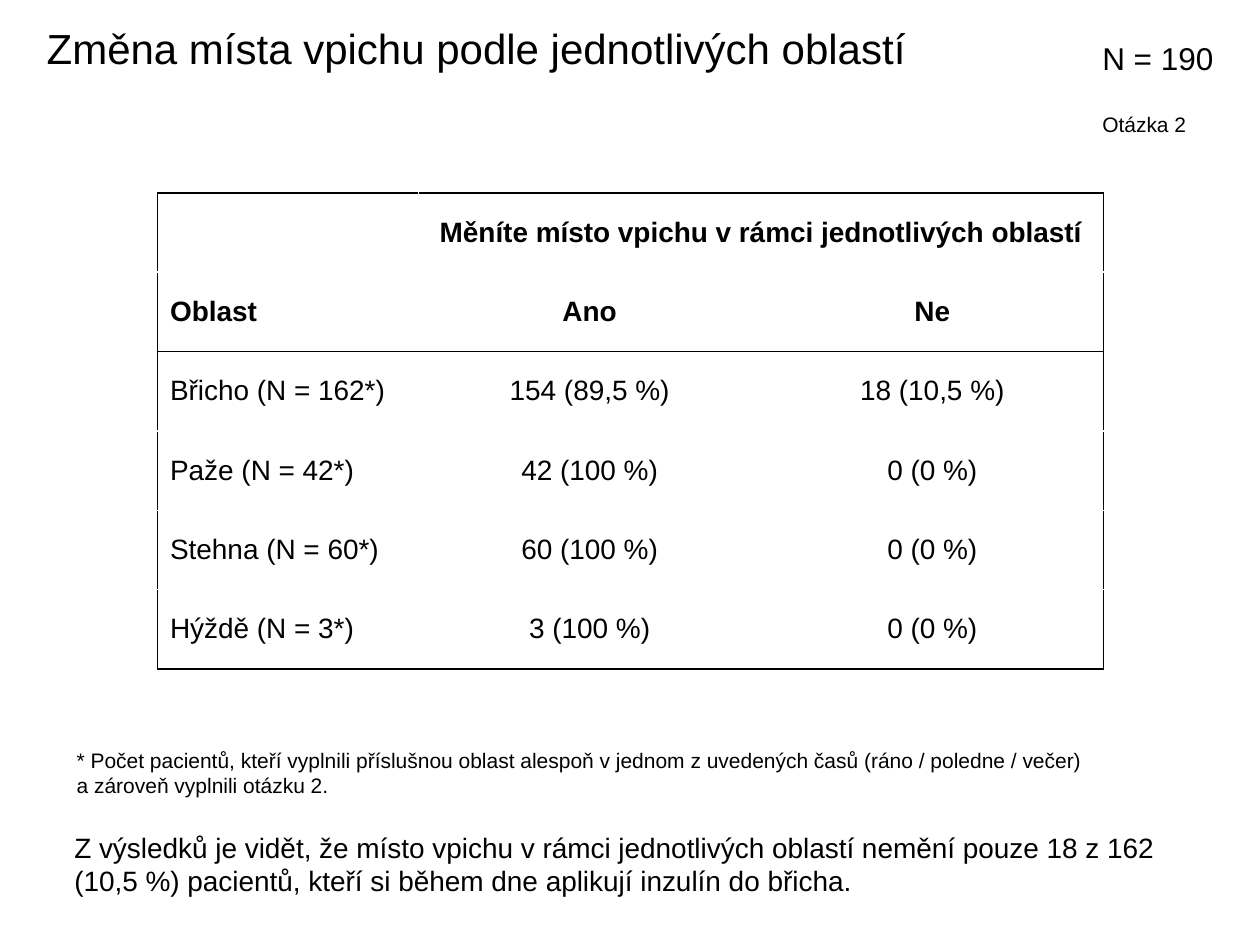
from lxml import etree
from pptx import Presentation
from pptx.dml.color import RGBColor
from pptx.enum.text import MSO_ANCHOR, MSO_AUTO_SIZE, PP_ALIGN
from pptx.oxml.ns import qn
from pptx.util import Inches, Pt

TOP, MIDDLE = MSO_ANCHOR.TOP, MSO_ANCHOR.MIDDLE
LEFT, CENTER = PP_ALIGN.LEFT, PP_ALIGN.CENTER
NO_FIT = MSO_AUTO_SIZE.NONE
FONT, BLACK, WHITE = "Arial", "000000", "FFFFFF"
TITLE_ONLY = 5

HEADER_ROWS = 2
COL_WIDTHS = [2.07, 2.72, 2.72]
ROW_HEIGHT = 0.63
ROWS = [
    ["", "Měníte místo vpichu v rámci jednotlivých oblastí", ""],
    ["Oblast", "Ano", "Ne"],
    ["Břicho (N = 162*)", "154 (89,5 %)", "18 (10,5 %)"],
    ["Paže (N = 42*)", "42 (100 %)", "0 (0 %)"],
    ["Stehna (N = 60*)", "60 (100 %)", "0 (0 %)"],
    ["Hýždě (N = 3*)", "3 (100 %)", "0 (0 %)"],
]


def color(value):
    return RGBColor.from_string(value)


def write(p, text, size, bold=False, align=LEFT):
    p.alignment = align
    r = p.add_run()
    r.text = text
    r.font.name = FONT
    r.font.size = Pt(size)
    r.font.bold = bold
    r.font.color.rgb = color(BLACK)


def add_title(s, text, x, y, w, h):
    sp = s.shapes.title
    sp.left, sp.top, sp.width, sp.height = map(Inches, (x, y, w, h))
    tf = sp.text_frame
    tf.auto_size = NO_FIT
    tf.vertical_anchor = TOP
    write(tf.paragraphs[0], text, 24)


def add_text(s, lines, x, y, w, h, size, wrap=True, inset=None):
    tf = s.shapes.add_textbox(*map(Inches, (x, y, w, h))).text_frame
    tf.word_wrap = wrap
    if inset is not None:
        tf.margin_left = tf.margin_right = Inches(inset)
        tf.margin_top = tf.margin_bottom = Inches(inset)
    for i, line in enumerate(lines):
        p = tf.add_paragraph() if i else tf.paragraphs[0]
        write(p, line, size)


def set_borders(cell, edges):
    tc_pr = cell._tc.get_or_add_tcPr()
    for side in "LRTB":
        ln = etree.SubElement(tc_pr, qn(f"a:ln{side}"), w=str(Pt(1)))
        fill = etree.SubElement(ln, qn("a:solidFill"))
        etree.SubElement(fill, qn("a:srgbClr"), val=BLACK if edges[side] else WHITE)


def add_results_table(s, x, y):
    n_rows, n_cols = len(ROWS), len(COL_WIDTHS)
    frame = s.shapes.add_table(n_rows, n_cols, Inches(x), Inches(y),
                               Inches(sum(COL_WIDTHS)), Inches(ROW_HEIGHT * n_rows))
    table = frame.table
    table.first_row = table.horz_banding = False
    for column, width in zip(table.columns, COL_WIDTHS):
        column.width = Inches(width)
    # The question spans both answer columns
    table.cell(0, 1).merge(table.cell(0, 2))
    for i, row in enumerate(ROWS):
        table.rows[i].height = Inches(ROW_HEIGHT)
        for j, text in enumerate(row):
            cell = table.cell(i, j)
            cell.vertical_anchor = MIDDLE
            # Black frame and header rule, white inner lines
            set_borders(cell, {
                "L": j == 0,
                "R": j == n_cols - 1 or cell.is_merge_origin,
                "T": i in (0, HEADER_ROWS),
                "B": i in (HEADER_ROWS - 1, n_rows - 1),
            })
            cell.fill.background()
            if text:
                write(cell.text_frame.paragraphs[0], text, 16,
                      bold=i < HEADER_ROWS, align=CENTER if j else LEFT)


def main():
    prs = Presentation()
    prs.slide_width, prs.slide_height = Inches(10), Inches(7.5)
    s = prs.slides.add_slide(prs.slide_layouts[TITLE_ONLY])

    # Heading and sample size
    add_title(s, "Změna místa vpichu podle jednotlivých oblastí", 0.27, 0.13, 9.14, 0.55)
    add_text(s, ["N = 190"], 8.65, 0.26, 1.3, 0.4, 18)
    add_text(s, ["Otázka 2"], 8.65, 0.84, 1.1, 0.3, 12)

    # Results
    add_results_table(s, 1.25, 1.53)

    # Footnote and conclusion
    add_text(s, ["* Počet pacientů, kteří vyplnili příslušnou oblast alespoň v jednom "
                 "z uvedených časů (ráno / poledne / večer)",
                 "a zároveň vyplnili otázku 2."], 0.51, 5.88, 8.29, 0.5, 12, wrap=False)
    add_text(s, ["Z výsledků je vidět, že místo vpichu v rámci jednotlivých oblastí nemění "
                 "pouze 18 z 162 (10,5 %) pacientů, kteří si během dne aplikují inzulín "
                 "do břicha."], 0.51, 6.51, 8.74, 0.87, 16, inset=0.08)

    prs.save("out.pptx")


if __name__ == "__main__":
    main()
